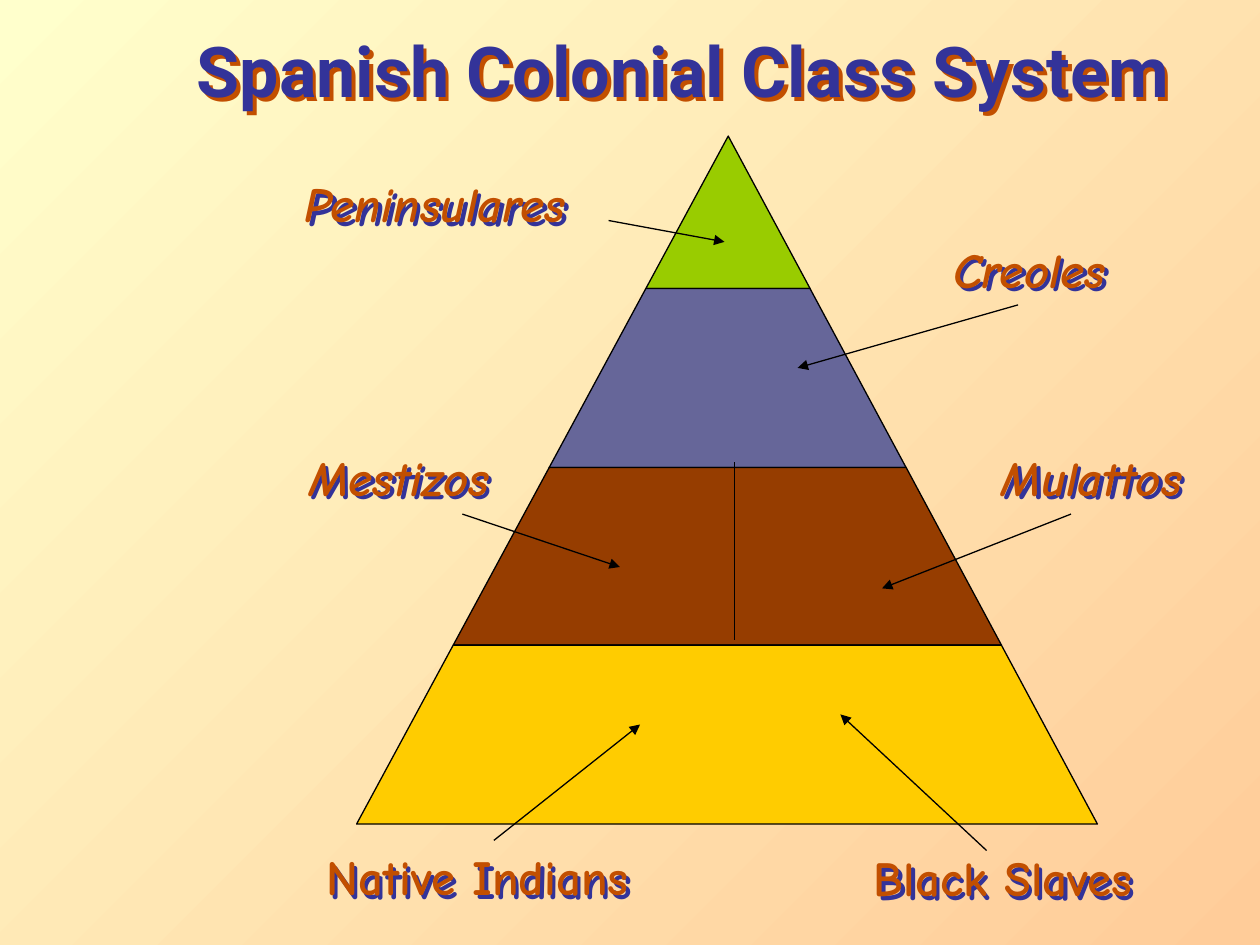
"""Build the Spanish colonial class system pyramid slide."""
from dataclasses import dataclass
from itertools import pairwise

from lxml import etree
from pptx import Presentation
from pptx.dml.color import RGBColor
from pptx.enum.shapes import MSO_CONNECTOR
from pptx.enum.text import MSO_AUTO_SIZE, PP_ALIGN
from pptx.oxml.ns import qn
from pptx.util import Inches, Pt

STRAIGHT = MSO_CONNECTOR.STRAIGHT
FIT_SHAPE = MSO_AUTO_SIZE.SHAPE_TO_FIT_TEXT
CENTER = PP_ALIGN.CENTER

COLORS = {
    "bg_start": "FFFFCC",
    "bg_end": "FFCC99",
    "blue": "333399",
    "orange": "C24F00",
    "line": "000000",
    "peninsulares": "99CC00",
    "creoles": "666699",
    "mixed": "963D00",
    "base": "FFCC00",
}
LINE_WIDTH = Pt(0.75)
APEX_X, BASE_LEFT, BASE_RIGHT = 5.78, 2.83, 8.71
LEVELS = (1.08, 2.29, 3.71, 5.12, 6.54)
TIERS = ("peninsulares", "creoles", "mixed", "base")


@dataclass(frozen=True)
class Label:
    """A shadowed line of text, placed in inches."""
    text: str
    left: float
    top: float
    width: float
    height: float = 0.57
    size: int = 28
    font: str = "Comic Neue"
    color: str = "orange"
    shadow: str = "blue"
    italic: bool = False


@dataclass(frozen=True)
class Line:
    """A straight line between two points, in inches."""
    x1: float
    y1: float
    x2: float
    y2: float
    arrow: bool = True


TITLE = Label("Spanish Colonial Class System", 1.17, 0.17, 8.5, 0.77,
              40, "Roboto", "blue", "orange")
LABELS = (
    Label("Peninsulares", 2.08, 1.33, 2.75, italic=True),
    Label("Creoles", 7.17, 1.85, 2, italic=True),
    Label("Mestizos", 2.17, 3.5, 2, italic=True),
    Label("Mulattos", 7.75, 3.5, 1.83, italic=True),
    Label("Native Indians", 2.08, 6.67, 3.42),
    Label("Black Slaves", 6.42, 6.68, 3.08),
)
LINES = (
    Line(4.83, 1.75, 5.75, 1.92),
    Line(5.83, 3.67, 5.83, 5.08, arrow=False),
    Line(8.08, 2.42, 6.33, 2.92),
    Line(3.67, 4.08, 4.92, 4.5),
    Line(8.5, 4.08, 7, 4.67),
    Line(3.92, 6.67, 5.08, 5.75),
    Line(7.83, 6.75, 6.67, 5.67),
)


def rgb(name: str) -> RGBColor:
    """Look up a named colour."""
    return RGBColor.from_string(COLORS[name])


def paint_background(slide) -> None:
    """Fill the slide with a diagonal gradient."""
    fill = slide.background.fill
    fill.gradient()
    fill.gradient_angle = 315
    for stop, name in zip(fill.gradient_stops, ("bg_start", "bg_end")):
        stop.color.rgb = rgb(name)


def add_label(slide, label: Label) -> None:
    """Add a centred text box whose text casts a coloured shadow."""
    sp = slide.shapes.add_textbox(Inches(label.left), Inches(label.top),
                                  Inches(label.width), Inches(label.height))
    tf = sp.text_frame
    tf.word_wrap = True
    tf.auto_size = FIT_SHAPE
    p = tf.paragraphs[0]
    p.alignment = CENTER
    r = p.add_run()
    r.text = label.text
    r.font.name = label.font
    r.font.size = Pt(label.size)
    r.font.bold = True
    r.font.italic = label.italic
    r.font.color.rgb = rgb(label.color)
    effects = etree.SubElement(sp._element.spPr, qn("a:effectLst"))
    shadow = etree.SubElement(effects, qn("a:outerShdw"), dist="35921",
                              dir="2700000", algn="ctr", rotWithShape="0")
    etree.SubElement(shadow, qn("a:srgbClr"), val=COLORS[label.shadow])


def edge_points(y: float) -> list[tuple[int, int]]:
    """Find the left and right pyramid edges at a height."""
    share = (y - LEVELS[0]) / (LEVELS[-1] - LEVELS[0])
    return [(Inches(APEX_X + share * (x - APEX_X)), Inches(y))
            for x in (BASE_LEFT, BASE_RIGHT)]


def add_pyramid(slide) -> None:
    """Stack the tiers from apex to base in one group."""
    group = slide.shapes.add_group_shape()
    for name, (top, bottom) in zip(TIERS, pairwise(LEVELS)):
        outline = edge_points(top) + edge_points(bottom)[::-1]
        start, *rest = dict.fromkeys(outline)
        builder = group.shapes.build_freeform(*start)
        builder.add_line_segments(rest, close=True)
        sp = builder.convert_to_shape()
        sp.shadow.inherit = False
        sp.fill.solid()
        sp.fill.fore_color.rgb = rgb(name)
        sp.line.color.rgb = rgb("line")
        sp.line.width = LINE_WIDTH


def add_line(slide, line: Line) -> None:
    """Add a thin line, with an arrowhead at its end if wanted."""
    cxn = slide.shapes.add_connector(STRAIGHT, Inches(line.x1), Inches(line.y1),
                                     Inches(line.x2), Inches(line.y2))
    cxn.line.color.rgb = rgb("line")
    cxn.line.width = LINE_WIDTH
    if line.arrow:
        etree.SubElement(cxn.line._get_or_add_ln(), qn("a:tailEnd"), type="triangle")
    etree.SubElement(cxn._element.spPr, qn("a:effectLst"))


def main() -> None:
    """Build and save the slide."""
    prs = Presentation()
    prs.slide_width, prs.slide_height = Inches(10), Inches(7.5)
    slide = prs.slides.add_slide(prs.slide_layouts[6])
    paint_background(slide)
    add_label(slide, TITLE)
    add_pyramid(slide)
    for line in LINES:
        add_line(slide, line)
    for label in LABELS:
        add_label(slide, label)
    prs.save("out.pptx")


if __name__ == "__main__":
    main()
